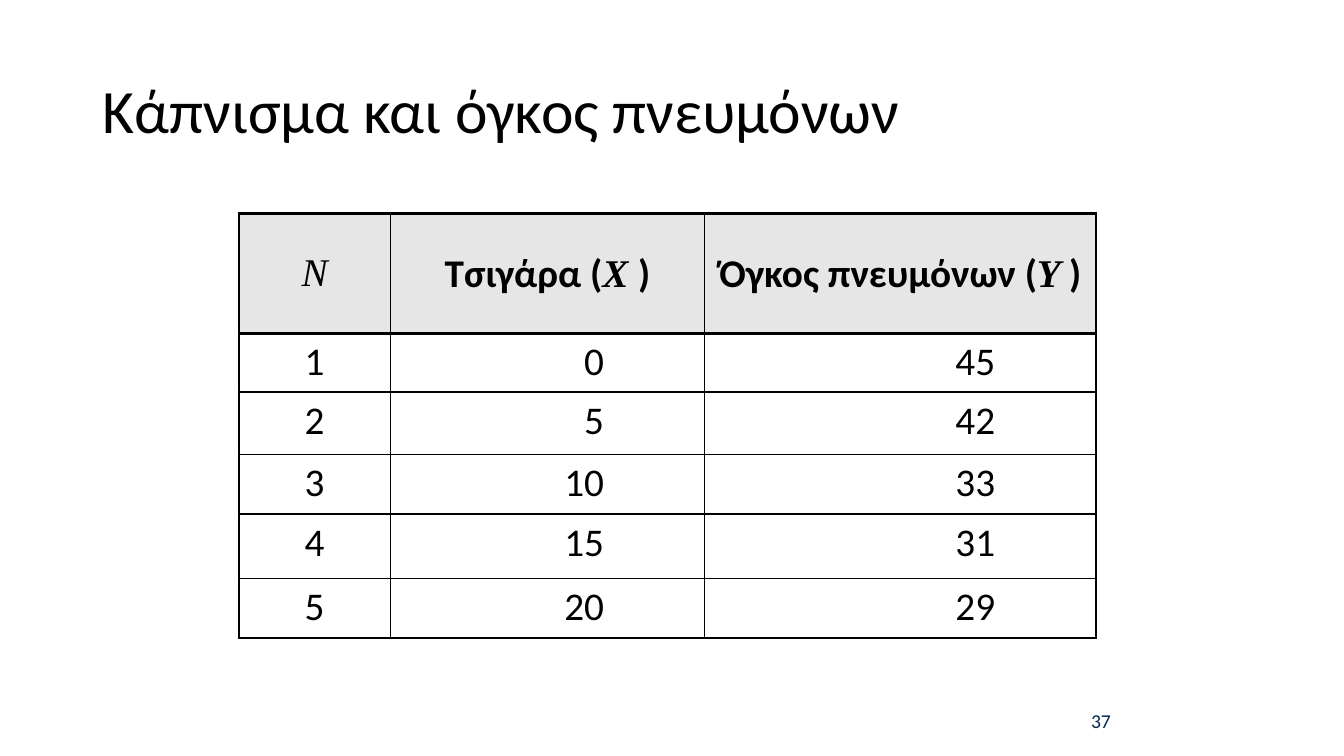
from dataclasses import dataclass

from lxml.etree import SubElement
from pptx import Presentation
from pptx.dml.color import RGBColor
from pptx.enum.text import MSO_ANCHOR, PP_ALIGN
from pptx.oxml.ns import qn
from pptx.util import Inches, Pt


@dataclass(frozen=True)
class Theme:
    ink: str = "000000"
    number_ink: str = "00264C"
    header_fill: str = "E6E6E6"
    font: str = "Calibri"
    symbol_font: str = "Times New Roman"
    title_size: float = 44
    table_size: float = 28
    number_size: float = 14
    thin: float = 1
    frame: float = 2.25
    header_rule: float = 3


THEME = Theme()

COLUMN_WIDTHS = [1.5, 3.12, 3.88]
ROW_HEIGHTS = [1.19, 0.58, 0.62, 0.59, 0.64, 0.59]
# Header cells as (text, is symbol, is bold) parts
HEADERS = [
    [("N", True, False)],
    [("Τσιγάρα (", False, True), ("X ", True, True), (")", False, True)],
    [("Όγκος πνευμόνων (", False, True), ("Y ", True, True), (")", False, True)],
]
CIGARETTES = [0, 5, 10, 15, 20]
LUNG_VOLUMES = [45, 42, 33, 31, 29]


def format_run(run, size, color=THEME.ink, symbol=False, bold=False):
    font = run.font
    font.name = THEME.symbol_font if symbol else THEME.font
    font.size = Pt(size)
    font.italic = symbol
    font.bold = bold
    font.color.rgb = RGBColor.from_string(color)


def add_text(slide, box, text, size, color, alignment, line_spacing=1.0):
    shape = slide.shapes.add_textbox(*map(Inches, box))
    text_frame = shape.text_frame
    text_frame.word_wrap = True
    text_frame.vertical_anchor = MSO_ANCHOR.MIDDLE
    text_frame.text = text
    paragraph = text_frame.paragraphs[0]
    paragraph.alignment = alignment
    paragraph.line_spacing = line_spacing
    format_run(paragraph.runs[0], size, color)


def set_borders(cell, **widths):
    properties = cell._tc.get_or_add_tcPr()
    for side in "LRTB":
        line = SubElement(properties, qn(f"a:ln{side}"), w=str(Pt(widths[side])))
        fill = SubElement(line, qn("a:solidFill"))
        SubElement(fill, qn("a:srgbClr"), val=THEME.ink)


def fill_header(cell, parts):
    cell.vertical_anchor = MSO_ANCHOR.MIDDLE
    cell.fill.solid()
    cell.fill.fore_color.rgb = RGBColor.from_string(THEME.header_fill)
    paragraph = cell.text_frame.paragraphs[0]
    paragraph.alignment = PP_ALIGN.CENTER
    for text, symbol, bold in parts:
        run = paragraph.add_run()
        run.text = text
        format_run(run, THEME.table_size, symbol=symbol, bold=bold)


def fill_value(cell, value, centered):
    cell.fill.background()
    cell.vertical_anchor = MSO_ANCHOR.TOP
    cell.margin_right = Inches(0.1 if centered else 1)
    cell.text_frame.text = str(value)
    paragraph = cell.text_frame.paragraphs[0]
    paragraph.alignment = PP_ALIGN.CENTER if centered else PP_ALIGN.RIGHT
    format_run(paragraph.runs[0], THEME.table_size)


def add_data_table(slide, box):
    row_count, column_count = len(ROW_HEIGHTS), len(COLUMN_WIDTHS)
    table = slide.shapes.add_table(row_count, column_count, *map(Inches, box)).table
    table.horz_banding = False
    for column, width in zip(table.columns, COLUMN_WIDTHS):
        column.width = Inches(width)
    for row, height in zip(table.rows, ROW_HEIGHTS):
        row.height = Inches(height)

    # Rules: heavy outer frame, heavier line under the header, thin inside
    verticals = [THEME.frame] + [THEME.thin] * (column_count - 1) + [THEME.frame]
    horizontals = ([THEME.frame, THEME.header_rule]
                   + [THEME.thin] * (row_count - 2) + [THEME.frame])
    records = list(zip(range(1, row_count), CIGARETTES, LUNG_VOLUMES))
    for r, contents in enumerate([HEADERS] + records):
        for c, content in enumerate(contents):
            cell = table.cell(r, c)
            set_borders(cell, L=verticals[c], R=verticals[c + 1],
                        T=horizontals[r], B=horizontals[r + 1])
            if r == 0:
                fill_header(cell, content)
            else:
                fill_value(cell, content, centered=c == 0)


def main():
    presentation = Presentation()
    presentation.slide_width = Inches(13.33)
    presentation.slide_height = Inches(7.5)
    slide = presentation.slides.add_slide(presentation.slide_layouts[6])

    # Title
    add_text(slide, (0.92, 0.4, 11.5, 1.45), "Κάπνισμα και όγκος πνευμόνων",
             THEME.title_size, THEME.ink, PP_ALIGN.LEFT, line_spacing=0.9)
    # Data table
    add_data_table(slide, (2.37, 2.12, sum(COLUMN_WIDTHS), sum(ROW_HEIGHTS)))
    # Slide number
    add_text(slide, (9.42, 6.95, 3, 0.4), "37",
             THEME.number_size, THEME.number_ink, PP_ALIGN.CENTER)

    presentation.save("out.pptx")


if __name__ == "__main__":
    main()
